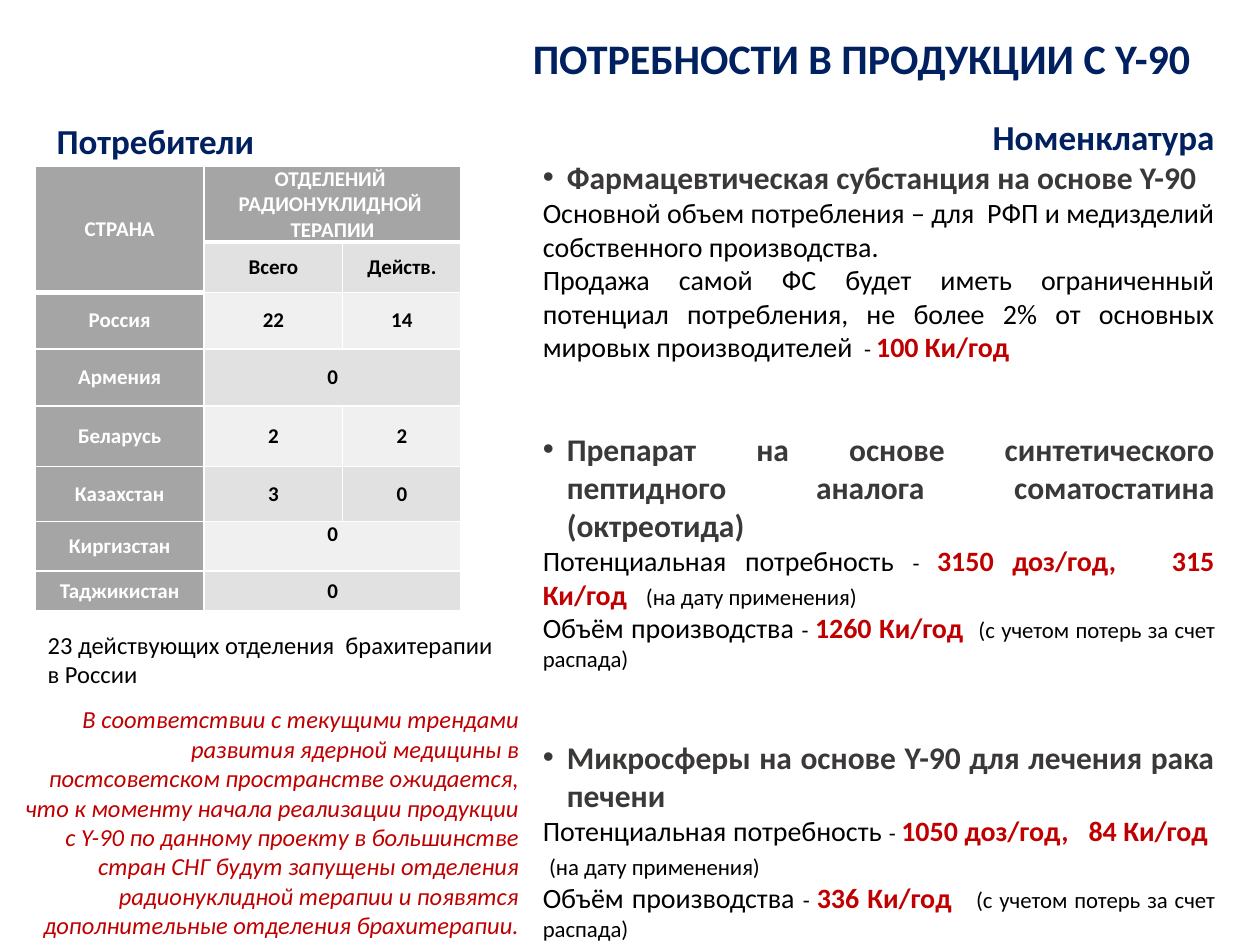
import pptx
import pptx.util
import pptx.dml.color
import pptx.enum.text
import pptx.oxml.ns
import lxml.etree

Inches = pptx.util.Inches
Pt = pptx.util.Pt
ALIGN = pptx.enum.text.PP_ALIGN
ANCHOR = pptx.enum.text.MSO_ANCHOR
FONT = "Calibri"
NAVY, RED, BLACK, DARK, WHITE, GRAY = "002060", "C00000", "000000", "3B3838", "FFFFFF", "A5A5A5"
WIDTHS = [1.34, 1.1, 0.94]
HEIGHTS = [0.59, 0.4, 0.45, 0.45, 0.48, 0.44, 0.39, 0.32]
HEADER = "ОТДЕЛЕНИЙ \nРАДИОНУКЛИДНОЙ \nТЕРАПИИ"
ROWS = [
    ("СТРАНА", HEADER),
    ("", "Всего", "Действ."),
    ("Россия", "22", "14"),
    ("Армения", "0"),
    ("Беларусь", "2", "2"),
    ("Казахстан", "3", "0"),
    ("Киргизстан", "0"),
    ("Таджикистан", "0"),
]
THICK = {(0, 0), (0, 1), (0, 2), (1, 0)}
NEED = "Потенциальная потребность "
MAKE = "Объём производства "
DATED = "(на дату применения)"
LOSS = "(с учетом потерь за счет распада)"
TREND = (
    "В соответствии с текущими трендами развития ядерной медицины в постсоветском "
    "пространстве ожидается, что к моменту начала реализации продукции с Y-90 по данному "
    "проекту в большинстве стран СНГ будут запущены отделения радионуклидной терапии и "
    "появятся дополнительные отделения брахитерапии."
)
GOODS = [
    ("Фармацевтическая субстанция на основе Y-90", [
        ("Основной объем потребления – для  РФП и медизделий собственного производства. ",),
        ("Продажа самой ФС будет иметь ограниченный потенциал потребления, не более 2% "
         "от основных мировых производителей ", " - ", "100 Ки/год"),
    ]),
    ("Препарат на основе синтетического пептидного аналога соматостатина (октреотида)", [
        (NEED, "- ", "3150 доз/год,   315 Ки/год   ", DATED),
        (MAKE, "- ", "1260 Ки/год  ", LOSS),
    ]),
    ("Микросферы на основе Y-90 для лечения рака печени", [
        (NEED, "- ", "1050 доз/год,   84 Ки/год   ", DATED),
        (MAKE, "- ", "336 Ки/год   ", LOSS),
    ]),
]
STYLES = [(16, BLACK, False), (13, BLACK, False), (16, RED, True), (13, BLACK, False)]


def color(code):
    """Turn a hex string into a colour."""
    return pptx.dml.color.RGBColor.from_string(code)


def style(run, size, code, bold=False, italic=False):
    """Format one run."""
    font = run.font
    font.name, font.size = FONT, Pt(size)
    font.bold, font.italic = bold, italic
    font.color.rgb = color(code)


def add_box(slide, left, top, width, height):
    """Add a wrapping text box and return its frame."""
    frame = slide.shapes.add_textbox(*map(Inches, (left, top, width, height))).text_frame
    frame.word_wrap = True
    return frame


def add_label(slide, place, text, size, code, align=ALIGN.LEFT, **kind):
    """Add a text box with one uniform paragraph."""
    frame = add_box(slide, *place)
    frame.text = text
    para = frame.paragraphs[0]
    para.alignment = align
    style(para.runs[0], size, code, **kind)
    return frame


def add_bullet(para):
    """Give a paragraph a hanging round bullet."""
    props = para._p.get_or_add_pPr()
    props.set("marL", str(Inches(0.19)))
    props.set("indent", str(-Inches(0.19)))
    qn = pptx.oxml.ns.qn
    lxml.etree.SubElement(props, qn("a:buFont")).set("typeface", "Arial")
    lxml.etree.SubElement(props, qn("a:buChar")).set("char", "•")


def add_goods(frame):
    """Write each product heading with its volumes."""
    for index, (name, lines) in enumerate(GOODS):
        head = frame.add_paragraph()
        head.text = name
        head.alignment = ALIGN.JUSTIFY
        add_bullet(head)
        if index:
            head.space_before = Pt(38)
        style(head.runs[0], 18, DARK, True)
        for parts in lines:
            para = frame.add_paragraph()
            para.alignment = ALIGN.JUSTIFY
            for text, look in zip(parts, STYLES):
                run = para.add_run()
                run.text = text
                style(run, *look)


def set_edges(cell, row, col):
    """Draw white cell borders, heavier under the header."""
    qn = pptx.oxml.ns.qn
    props = cell._tc.get_or_add_tcPr()
    bold = {"T": (row - 1, col) in THICK, "B": (row, col) in THICK}
    for spot, side in enumerate("LRTB"):
        line = lxml.etree.Element(qn("a:ln" + side), w=str(Pt(3 if bold.get(side) else 1)))
        fill = lxml.etree.SubElement(line, qn("a:solidFill"))
        lxml.etree.SubElement(fill, qn("a:srgbClr")).set("val", WHITE)
        props.insert(spot, line)


def fill_cell(cell, text, row, col):
    """Set the text, fill and borders of a cell."""
    dark = row == 0 or col == 0
    cell.margin_left = cell.margin_right = Inches(0.05)
    cell.margin_top = cell.margin_bottom = 0
    cell.vertical_anchor = ANCHOR.TOP if row == 6 and col else ANCHOR.MIDDLE
    cell.fill.solid()
    cell.fill.fore_color.rgb = color(GRAY if dark else "E1E1E1" if row % 2 else "F0F0F0")
    set_edges(cell, row, col)
    cell.text_frame.text = text
    for para in cell.text_frame.paragraphs:
        para.alignment = ALIGN.CENTER
        for run in para.runs:
            style(run, 12, WHITE if dark else BLACK, True)


def add_grid(slide):
    """Add the table of departments by country."""
    place = map(Inches, (0.28, 1.32, sum(WIDTHS), sum(HEIGHTS)))
    table = slide.shapes.add_table(len(ROWS), len(WIDTHS), *place).table
    for col, width in zip(table.columns, WIDTHS):
        col.width = Inches(width)
    for row, height in zip(table.rows, HEIGHTS):
        row.height = Inches(height)
    for row, texts in enumerate(ROWS):
        for col in range(len(WIDTHS)):
            text = texts[col] if col < len(texts) else ""
            fill_cell(table.cell(row, col), text, row, col)
        if len(texts) == 2:
            table.cell(row, 1).merge(table.cell(row, 2))
    table.cell(0, 0).merge(table.cell(1, 0))


def main():
    """Build and save the slide."""
    deck = pptx.Presentation()
    deck.slide_width, deck.slide_height = Inches(10), Inches(7.5)
    slide = deck.slides.add_slide(deck.slide_layouts[6])
    add_label(slide, (4.13, 0.21, 5.75, 0.63), "ПОТРЕБНОСТИ В ПРОДУКЦИИ С Y-90", 24, NAVY, bold=True)
    goods = add_label(slide, (4.21, 0.87, 5.53, 6.29), "Номенклатура", 20, NAVY, ALIGN.RIGHT, bold=True)
    add_goods(goods)
    add_label(slide, (0.35, 0.9, 2.22, 0.49), "Потребители", 20, NAVY, bold=True)
    add_grid(slide)
    add_label(slide, (0.05, 5.54, 4.17, 1.99), TREND, 14, RED, ALIGN.RIGHT, italic=True)
    add_label(slide, (0.28, 4.95, 3.78, 0.57), "23 действующих отделения  брахитерапии в России", 14, BLACK)
    deck.save("out.pptx")


if __name__ == "__main__":
    main()
